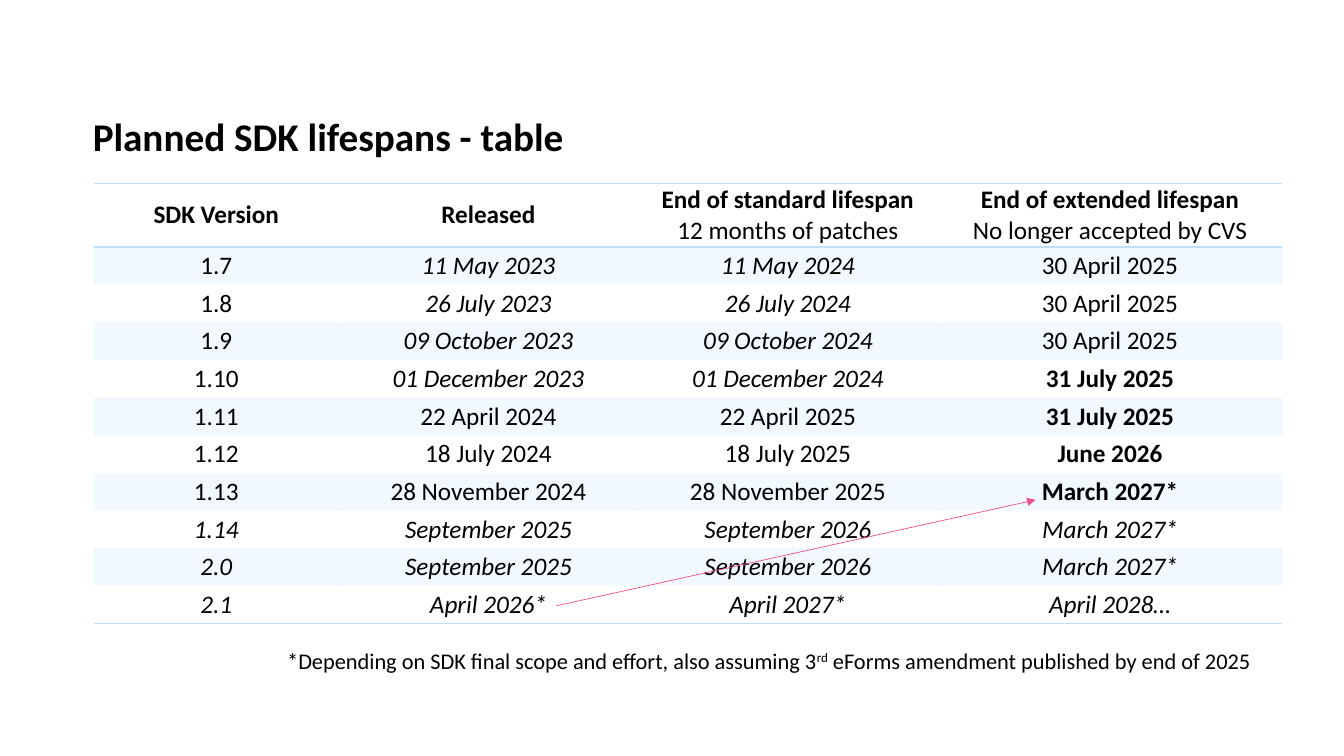
from lxml import etree
from pptx import Presentation
from pptx.dml.color import RGBColor
from pptx.enum.shapes import MSO_CONNECTOR
from pptx.enum.text import MSO_ANCHOR, PP_ALIGN
from pptx.oxml.ns import qn
from pptx.util import Inches, Pt

STRAIGHT = MSO_CONNECTOR.STRAIGHT
MIDDLE, BOTTOM, TOP = MSO_ANCHOR.MIDDLE, MSO_ANCHOR.BOTTOM, MSO_ANCHOR.TOP
CENTER = PP_ALIGN.CENTER

FONT = "Calibri"
BLACK, BLUE, PINK = "000000", "BDDEFD", "ED5087"
NO_TABLE_STYLE = "{2D5ABB26-0587-4C30-8999-92F81FD0307C}"

HEADERS = [
    ["SDK Version"],
    ["Released"],
    ["End of standard lifespan", "12 months of patches"],
    ["End of extended lifespan", "No longer accepted by CVS"],
]
# Each row: version, three dates, then one style letter per column
# (n normal, i italic, b bold).
LIFESPANS = [
    ("1.7", "11 May 2023", "11 May 2024", "30 April 2025", "niin"),
    ("1.8", "26 July 2023", "26 July 2024", "30 April 2025", "niin"),
    ("1.9", "09 October 2023", "09 October 2024", "30 April 2025", "niin"),
    ("1.10", "01 December 2023", "01 December 2024", "31 July 2025", "niib"),
    ("1.11", "22 April 2024", "22 April 2025", "31 July 2025", "nnnb"),
    ("1.12", "18 July 2024", "18 July 2025", "June 2026", "nnnb"),
    ("1.13", "28 November 2024", "28 November 2025", "March 2027*", "nnnb"),
    ("1.14", "September 2025", "September 2026", "March 2027*", "iiii"),
    ("2.0", "September 2025", "September 2026", "March 2027*", "iiii"),
    ("2.1", "April 2026*", "April 2027*", "April 2028…", "iiii"),
]
COL_WIDTHS = [2.43, 2.97, 2.97, 3.42]
HEADER_HEIGHT, ROW_HEIGHT = 0.63, 0.374


def rgb(color):
    return RGBColor.from_string(color)


class SlideBuilder:
    def __init__(self, slide):
        self.s = slide

    def run(self, p, text, size, style="n", baseline=0):
        r = p.add_run()
        r.text = text
        f = r.font
        f.name, f.size = FONT, Pt(size)
        f.bold, f.italic = style == "b", style == "i"
        f.color.rgb = rgb(BLACK)
        if baseline:
            f._element.set("baseline", str(baseline * 1000))

    def text(self, x, y, w, h, runs, size, margins, anchor=TOP, spacing=1.0):
        """Add a one-paragraph box; runs are (text, style, baseline percent)."""
        sp = self.s.shapes.add_textbox(Inches(x), Inches(y), Inches(w), Inches(h))
        tf = sp.text_frame
        tf.word_wrap = True
        tf.vertical_anchor = anchor
        tf.margin_left, tf.margin_top, tf.margin_right, tf.margin_bottom = map(Inches, margins)
        p = tf.paragraphs[0]
        p.line_spacing = spacing
        for text, style, baseline in runs:
            self.run(p, text, size, style, baseline)

    def cell(self, cell, lines, shaded=False, borders=()):
        """Fill a cell with (text, style) lines; borders are lnT and lnB tags in that order."""
        cell.vertical_anchor = MIDDLE
        cell.margin_left = cell.margin_right = Inches(0.01)
        cell.margin_top = cell.margin_bottom = Inches(0.01)
        tf = cell.text_frame
        for i, (text, style) in enumerate(lines):
            p = tf.add_paragraph() if i else tf.paragraphs[0]
            p.alignment = CENTER
            self.run(p, text, 18, style)
        tcPr = cell._tc.get_or_add_tcPr()
        if shaded:
            cell.fill.solid()
            cell.fill.fore_color.rgb = rgb(BLUE)
            clr = tcPr.find(".//" + qn("a:srgbClr"))
            etree.SubElement(clr, qn("a:alpha"), val="20000")
        else:
            cell.fill.background()
        for i, tag in enumerate(borders):
            ln = etree.Element(qn(tag), w=str(Pt(1)))
            fill = etree.SubElement(ln, qn("a:solidFill"))
            etree.SubElement(fill, qn("a:srgbClr"), val=BLUE)
            tcPr.insert(i, ln)

    def lifespan_table(self, x, y):
        width = sum(COL_WIDTHS)
        height = HEADER_HEIGHT + ROW_HEIGHT * len(LIFESPANS)
        frame = self.s.shapes.add_table(len(LIFESPANS) + 1, len(COL_WIDTHS), Inches(x),
                                        Inches(y), Inches(width), Inches(height))
        table = frame.table
        table.horz_banding = False
        table._tbl.tblPr.find(qn("a:tableStyleId")).text = NO_TABLE_STYLE
        for column, w in zip(table.columns, COL_WIDTHS):
            column.width = Inches(w)
        for i, row in enumerate(table.rows):
            row.height = Inches(ROW_HEIGHT if i else HEADER_HEIGHT)
        for c, lines in enumerate(HEADERS):
            self.cell(table.cell(0, c), list(zip(lines, "bn")), borders=("a:lnT", "a:lnB"))
        for r, (*texts, styles) in enumerate(LIFESPANS, 1):
            borders = ("a:lnB",) if r == len(LIFESPANS) else ()
            for c, line in enumerate(zip(texts, styles)):
                self.cell(table.cell(r, c), [line], r % 2 == 1, borders)

    def arrow(self, x1, y1, x2, y2, color, width):
        cx = self.s.shapes.add_connector(STRAIGHT, Inches(x1), Inches(y1), Inches(x2), Inches(y2))
        cx.line.color.rgb = rgb(color)
        cx.line.width = Pt(width)
        etree.SubElement(cx.line._get_or_add_ln(), qn("a:tailEnd"), type="triangle")
        etree.SubElement(cx._element.spPr, qn("a:effectLst"))


def main():
    prs = Presentation()
    prs.slide_width, prs.slide_height = Inches(13.33), Inches(7.5)
    b = SlideBuilder(prs.slides.add_slide(prs.slide_layouts[6]))
    b.text(0.92, 0.14, 11.48, 1.45, [("Planned SDK lifespans - table", "b", 0)], 28,
           (0, 0.05, 0, 0), BOTTOM, 0.9)
    b.lifespan_table(0.93, 1.82)
    footnote = [
        ("*Depending on SDK final scope and effort, also assuming 3", "n", 0),
        ("rd", "n", 30),
        (" eForms amendment published by end of 2025", "n", 0),
    ]
    b.text(2.75, 6.37, 9.97, 0.37, footnote, 16, (0.1, 0.05, 0.1, 0.05))
    b.arrow(5.52, 6.01, 10.27, 4.96, PINK, 0.5)
    prs.save("out.pptx")


if __name__ == "__main__":
    main()
